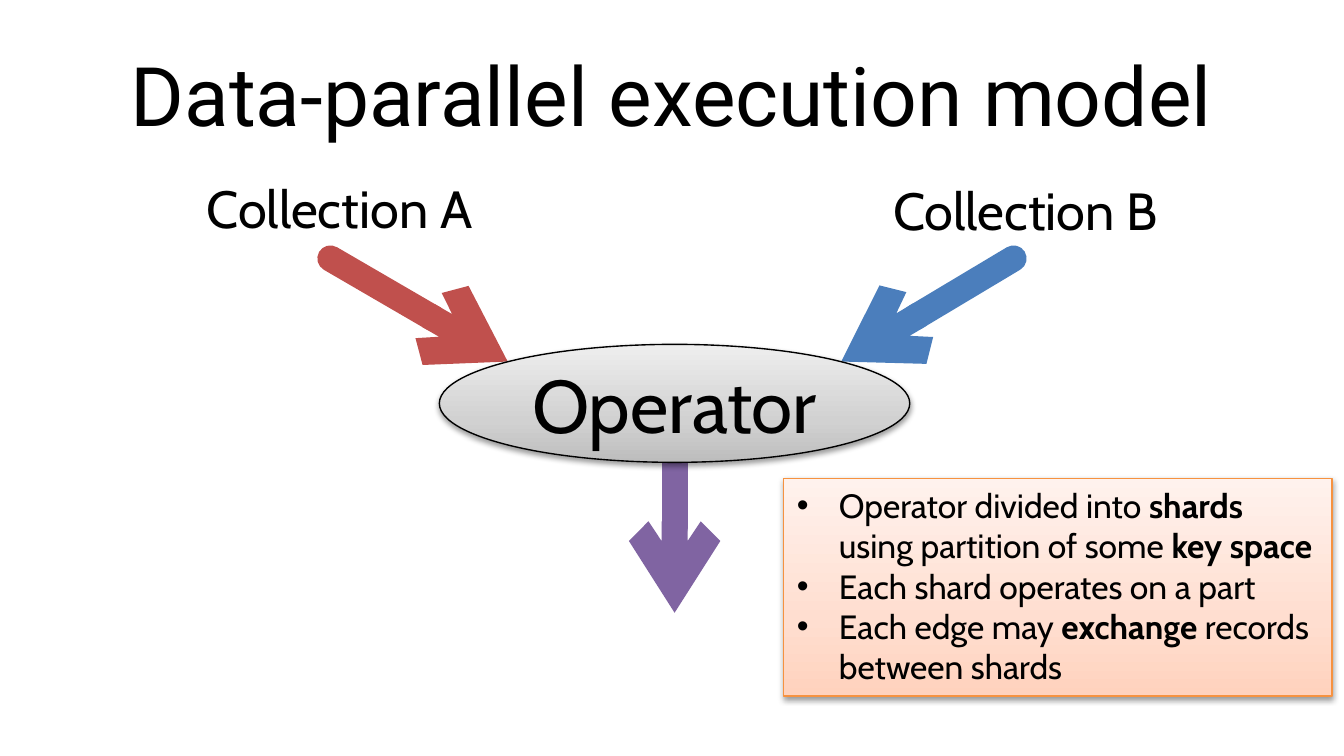
from lxml import etree
from pptx import Presentation
from pptx.dml.color import RGBColor
from pptx.enum.shapes import MSO_CONNECTOR, MSO_SHAPE
from pptx.enum.text import MSO_ANCHOR, PP_ALIGN
from pptx.oxml.ns import qn
from pptx.util import Pt

STRAIGHT = MSO_CONNECTOR.STRAIGHT
ELLIPSE, RECTANGLE = MSO_SHAPE.OVAL, MSO_SHAPE.RECTANGLE
TOP, MIDDLE = MSO_ANCHOR.TOP, MSO_ANCHOR.MIDDLE
LEFT, CENTER = PP_ALIGN.LEFT, PP_ALIGN.CENTER

BLACK = RGBColor(0x00, 0x00, 0x00)
RED = RGBColor(0xC0, 0x50, 0x4D)
BLUE = RGBColor(0x4B, 0x7E, 0xBC)
PURPLE = RGBColor(0x80, 0x64, 0xA2)
ORANGE = RGBColor(0xF6, 0x92, 0x40)
GRAYS = (RGBColor(0xBD, 0xBD, 0xBD), RGBColor(0xD1, 0xD1, 0xD1), RGBColor(0xEE, 0xEE, 0xEE))
PEACHES = (RGBColor(0xFF, 0xD2, 0xBD), RGBColor(0xFF, 0xDE, 0xD0), RGBColor(0xFF, 0xF2, 0xED))
GRADIENT_POSITIONS = (0, 35, 100)

BODY_FONT, TITLE_FONT = "Cabin", "Roboto"
BULLET_INDENT = Pt(22.5)

NOTES = [
    [("Operator divided into ", False), ("shards ", True),
     ("using partition of some ", False), ("key space", True)],
    [("Each shard operates on a part", False)],
    [("Each edge may ", False), ("exchange", True), (" records between shards", False)],
]


def add_child(parent, tag, **attributes):
    return etree.SubElement(parent, qn(tag), attributes)


def write_text(shape, paragraphs, size, font=BODY_FONT, align=CENTER, anchor=TOP, bullets=False):
    """Fill a shape with paragraphs, each a list of (text, bold) spans."""
    frame = shape.text_frame
    frame.word_wrap = True
    frame.vertical_anchor = anchor
    for index, spans in enumerate(paragraphs):
        para = frame.paragraphs[0] if index == 0 else frame.add_paragraph()
        para.alignment = align
        if bullets:
            properties = para._p.get_or_add_pPr()
            properties.set("marL", str(BULLET_INDENT))
            properties.set("indent", str(-BULLET_INDENT))
            add_child(properties, "a:buFont", typeface="Arial")
            add_child(properties, "a:buChar", char="•")
        for text, bold in spans:
            span = para.add_run()
            span.text = text
            span.font.name = font
            span.font.size = Pt(size)
            span.font.bold = bold
            span.font.color.rgb = BLACK


def add_label(page, text, left, top, width, height, **text_format):
    box = page.shapes.add_textbox(Pt(left), Pt(top), Pt(width), Pt(height))
    write_text(box, [[(text, False)]], **text_format)


def add_arrow(page, start, end, color):
    arrow = page.shapes.add_connector(STRAIGHT, *map(Pt, start + end))
    arrow.line.color.rgb = color
    arrow.line.width = Pt(14)
    properties = arrow.element.spPr
    outline = properties.find(qn("a:ln"))
    outline.set("cap", "rnd")
    add_child(outline, "a:tailEnd", type="arrow")
    add_child(properties, "a:effectLst")


def fill_upward(shape, colors):
    """Apply a gradient whose first colour is at the bottom."""
    shape.fill.gradient()
    shape.fill.gradient_angle = 90
    stops = shape.element.spPr.find(".//" + qn("a:gsLst"))
    for stop in list(stops):
        stops.remove(stop)
    for position, color in zip(GRADIENT_POSITIONS, colors):
        stop = add_child(stops, "a:gs", pos=str(position * 1000))
        add_child(stop, "a:srgbClr", val=str(color))


def add_drop_shadow(shape):
    shape.shadow.inherit = False
    effects = shape.element.spPr.find(qn("a:effectLst"))
    shadow = add_child(effects, "a:outerShdw", blurRad=str(Pt(3.1)), dist=str(Pt(1.6)),
                       dir="5400000", rotWithShape="0")
    color = add_child(shadow, "a:srgbClr", val=str(BLACK))
    add_child(color, "a:alpha", val="38000")


def add_panel(page, kind, left, top, width, height, colors, outline):
    panel = page.shapes.add_shape(kind, Pt(left), Pt(top), Pt(width), Pt(height))
    fill_upward(panel, colors)
    panel.line.color.rgb = outline
    panel.line.width = Pt(0.75)
    add_drop_shadow(panel)
    return panel


def main():
    deck = Presentation()
    deck.slide_width, deck.slide_height = Pt(720), Pt(405)
    page = deck.slides.add_slide(deck.slide_layouts[6])

    add_label(page, "Data-parallel execution model", 36, 16.5, 648, 67.5,
              size=44, font=TITLE_FONT, anchor=MIDDLE)
    add_label(page, "Collection A", 81.4, 90.7, 200.9, 41, size=28)
    add_label(page, "Collection B", 462.2, 92.2, 174.2, 41, size=28)

    add_arrow(page, (177, 138.5), (272, 193.7), RED)
    add_arrow(page, (543, 138.5), (450.7, 193.7), BLUE)
    add_arrow(page, (361.4, 247.7), (361.4, 328.3), PURPLE)

    operator = add_panel(page, ELLIPSE, 235.4, 184.5, 252, 63.2, GRAYS, BLACK)
    write_text(operator, [[("Operator", False)]], size=40, anchor=MIDDLE)

    notes_box = add_panel(page, RECTANGLE, 419.8, 256.3, 293.8, 116.6, PEACHES, ORANGE)
    write_text(notes_box, NOTES, size=18, align=LEFT, bullets=True)

    deck.save("out.pptx")


if __name__ == "__main__":
    main()
